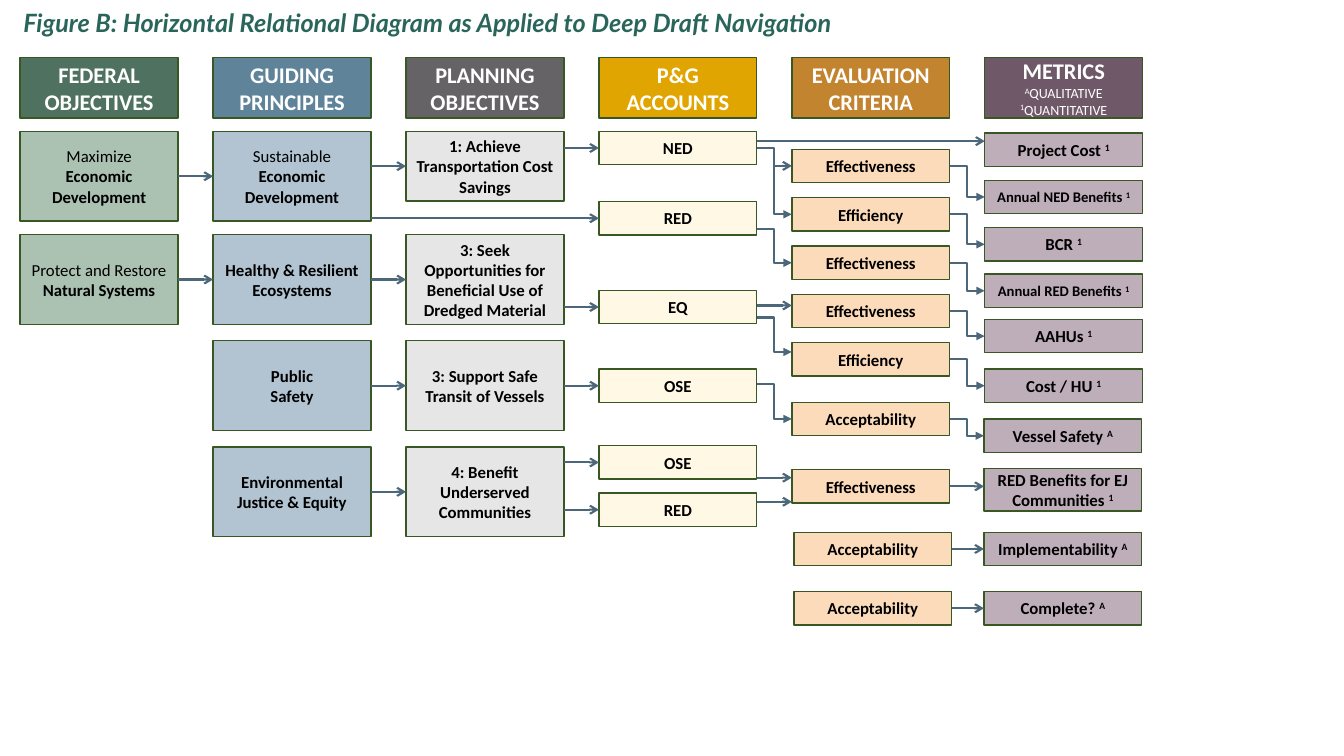
from dataclasses import dataclass

from lxml.etree import SubElement
from pptx import Presentation
from pptx.dml.color import RGBColor
from pptx.enum.shapes import MSO_CONNECTOR as Connector
from pptx.enum.shapes import MSO_SHAPE as Shape
from pptx.enum.text import MSO_ANCHOR as Anchor
from pptx.enum.text import MSO_AUTO_SIZE as AutoSize
from pptx.enum.text import PP_ALIGN as Align
from pptx.oxml.ns import qn
from pptx.util import Pt


@dataclass(frozen=True)
class Theme:
    title_color: str = "29655A"
    outline: str = "385723"
    arrow: str = "4B6779"
    light: str = "FFFFFF"
    dark: str = "000000"
    title_font: str = "Lato"
    box_font: str = "Calibri"
    title_size: float = 18
    header_size: float = 16
    body_size: float = 12
    small_size: float = 10.5
    note_size: float = 10


THEME = Theme()
LEFT, PITCH, WIDTH = 14.4, 137.8, 112.8
HEADER_TOP, HEADER_HEIGHT = 41, 43.4
TALL, MEDIUM, LOW, DOUBLE = 64.2, 49.8, 23.8, 30.2

COLUMNS = {
    "objectives": ("FEDERAL OBJECTIVES", "4E725F", "ABC2B3", [
        (93.8, TALL, "~Maximize\nEconomic Development"),
        (167.6, TALL, "~Protect and Restore\nNatural Systems"),
    ]),
    "principles": ("GUIDING PRINCIPLES", "5F8399", "B2C4D2", [
        (93.8, TALL, "~Sustainable\nEconomic Development"),
        (167.6, TALL, "Healthy & Resilient Ecosystems"),
        (243.4, TALL, "Public\nSafety"),
        (319.2, TALL, "Environmental Justice & Equity"),
    ]),
    "planning": ("PLANNING OBJECTIVES", "656365", "E7E6E6", [
        (93.8, MEDIUM, "1: Achieve Transportation Cost Savings"),
        (167.6, TALL, "3: Seek Opportunities for Beneficial Use of Dredged Material"),
        (243.4, TALL, "3: Support Safe Transit of Vessels"),
        (319.2, TALL, "4: Benefit Underserved Communities"),
    ]),
    "accounts": ("P&G ACCOUNTS", "E0A500", "FFF8E5", [
        (93.8, LOW, "NED"),
        (144, LOW, "RED"),
        (207.4, LOW, "EQ"),
        (263.6, LOW, "OSE"),
        (318.4, LOW, "OSE"),
        (352.2, LOW, "RED"),
    ]),
    "criteria": ("EVALUATION CRITERIA", "C3842F", "FCDBBA", [
        (106.6, LOW, "Effectiveness"),
        (141.2, LOW, "Efficiency"),
        (175.8, LOW, "Effectiveness"),
        (210.2, LOW, "Effectiveness"),
        (244.8, LOW, "Efficiency"),
        (287.4, LOW, "Acceptability"),
        (335.5, LOW, "Effectiveness"),
        (380.2, LOW, "Acceptability", 1.4),
        (422.6, LOW, "Acceptability", 1.4),
    ]),
    "metrics": ("METRICS |^A^QUALITATIVE ^1^QUANTITATIVE", "6F5969", "BEAEBA", [
        (95, LOW, "Project Cost ^1"),
        (128.8, LOW, "Annual NED Benefits ^1"),
        (162.6, LOW, "BCR ^1"),
        (195.8, LOW, "Annual RED Benefits ^1"),
        (228.2, LOW, "AAHUs ^1"),
        (263.6, LOW, "Cost / HU ^1"),
        (299.4, LOW, "Vessel Safety ^A", -0.6),
        (334.8, DOUBLE, "RED Benefits for EJ Communities ^1", -0.6),
        (380.2, LOW, "Implementability ^A", -0.6),
        (422.6, LOW, "Complete? ^A", -0.6),
    ]),
}

LEVEL_LINKS = [
    ("objectives", 0, "principles", 0, None),
    ("objectives", 1, "principles", 1, None),
    ("principles", 0, "planning", 0, None),
    ("principles", 1, "planning", 1, None),
    ("principles", 2, "planning", 2, None),
    ("principles", 3, "planning", 3, None),
    ("principles", 0, "accounts", 1, None),
    ("planning", 0, "accounts", 0, None),
    ("planning", 1, "accounts", 2, None),
    ("planning", 2, "accounts", 3, None),
    ("planning", 3, "accounts", 4, None),
    ("planning", 3, "accounts", 5, None),
    ("accounts", 0, "metrics", 0, 100.8),
    ("accounts", 2, "criteria", 3, 218.2),
    ("accounts", 4, "criteria", 6, 341.2),
    ("accounts", 5, "criteria", 6, 358.4),
    ("criteria", 6, "metrics", 7, 347.4),
    ("criteria", 7, "metrics", 8, None),
    ("criteria", 8, "metrics", 9, None),
]

ELBOW_LINKS = [
    ("accounts", 0, "criteria", 1, None, None),
    ("accounts", 1, "criteria", 2, 163.4, None),
    ("accounts", 2, "criteria", 4, 226.8, 251.4),
    ("accounts", 3, "criteria", 5, 274.4, None),
] + [("criteria", row, "metrics", row + 1, None, None) for row in range(6)]


def middle(shape):
    return shape.top + shape.height // 2


def write_paragraph(paragraph, text, size, color):
    paragraph.alignment = Align.CENTER
    font = paragraph.font
    font.name, font.size = THEME.box_font, Pt(size)
    font.bold = not text.startswith("~")
    font.color.rgb = RGBColor.from_string(color)
    main, _, note = text.lstrip("~").partition("|")
    for part, is_note in ((main, False), (note, True)):
        for index, piece in enumerate(part.split("^")):
            if not piece:
                continue
            run = paragraph.add_run()
            run.text = piece
            if is_note:
                run.font.size, run.font.bold = Pt(THEME.note_size), False
            if index % 2:
                run._r.get_or_add_rPr().set("baseline", "30000")


def add_box(slide, left, top, height, text, fill, size, color):
    shape = slide.shapes.add_shape(Shape.RECTANGLE, Pt(left), Pt(top), Pt(WIDTH), Pt(height))
    shape.shadow.inherit = False
    shape.fill.solid()
    shape.fill.fore_color.rgb = RGBColor.from_string(fill)
    shape.line.color.rgb = RGBColor.from_string(THEME.outline)
    shape.line.width = Pt(1)
    frame = shape.text_frame
    frame.word_wrap = True
    frame.vertical_anchor = Anchor.MIDDLE
    frame.margin_left = frame.margin_right = Pt(7)
    for index, line in enumerate(text.split("\n")):
        paragraph = frame.add_paragraph() if index else frame.paragraphs[0]
        write_paragraph(paragraph, line, size, color)
    return shape


def add_column(slide, left, header, header_fill, fill, rows):
    add_box(slide, left, HEADER_TOP, HEADER_HEIGHT, header, header_fill,
            THEME.header_size, THEME.light)
    boxes = []
    for top, height, text, *shift in rows:
        size = THEME.small_size if text.startswith("Annual") else THEME.body_size
        boxes.append(add_box(slide, left + sum(shift), top, height, text, fill, size, THEME.dark))
    return boxes


def add_arrow(slide, kind, start_x, start_y, end_x, end_y):
    connector = slide.shapes.add_connector(kind, start_x, start_y, end_x, end_y)
    connector.line.color.rgb = RGBColor.from_string(THEME.arrow)
    connector.line.width = Pt(1.5)
    head = "arrow" if kind == Connector.STRAIGHT else "triangle"
    SubElement(connector.line._get_or_add_ln(), qn("a:tailEnd"), type=head)
    SubElement(connector._element.spPr, qn("a:effectLst"))
    return connector


def link(slide, kind, start, end, leave, arrive):
    connector = add_arrow(slide, kind, start.left + start.width, leave, end.left, arrive)
    if abs(leave - middle(start)) < Pt(0.1):
        connector.begin_connect(start, 3)
    if abs(arrive - middle(end)) < Pt(0.1):
        connector.end_connect(end, 1)


def add_links(slide, boxes):
    for source, row, target, target_row, level in LEVEL_LINKS:
        start, end = boxes[source][row], boxes[target][target_row]
        y = middle(end) if level is None else Pt(level)
        link(slide, Connector.STRAIGHT, start, end, y, y)
    for source, row, target, target_row, leave, arrive in ELBOW_LINKS:
        start, end = boxes[source][row], boxes[target][target_row]
        link(slide, Connector.ELBOW, start, end,
             middle(start) if leave is None else Pt(leave),
             middle(end) if arrive is None else Pt(arrive))
    first = boxes["criteria"][0]
    branch_x = first.left - Pt((PITCH - WIDTH) / 2)
    branch = add_arrow(slide, Connector.STRAIGHT, branch_x, middle(first), first.left, middle(first))
    branch.end_connect(first, 1)


def add_title(slide, left, top, width, height):
    title = slide.shapes.title
    title.left, title.top, title.width, title.height = Pt(left), Pt(top), Pt(width), Pt(height)
    frame = title.text_frame
    frame.text = "Figure B: Horizontal Relational Diagram as Applied to Deep Draft Navigation"
    frame.word_wrap, frame.auto_size = True, AutoSize.NONE
    frame.vertical_anchor = Anchor.TOP
    paragraph = frame.paragraphs[0]
    paragraph.alignment = Align.LEFT
    font = paragraph.font
    font.name, font.size = THEME.title_font, Pt(THEME.title_size)
    font.bold = font.italic = True
    font.color.rgb = RGBColor.from_string(THEME.title_color)


def main():
    presentation = Presentation()
    presentation.slide_width, presentation.slide_height = Pt(960), Pt(540)
    slide = presentation.slides.add_slide(presentation.slide_layouts[5])
    add_title(slide, 9.4, 1.6, 851, 29)
    boxes = {name: add_column(slide, LEFT + index * PITCH, *column)
             for index, (name, column) in enumerate(COLUMNS.items())}
    add_links(slide, boxes)
    presentation.save("out.pptx")


if __name__ == "__main__":
    main()
